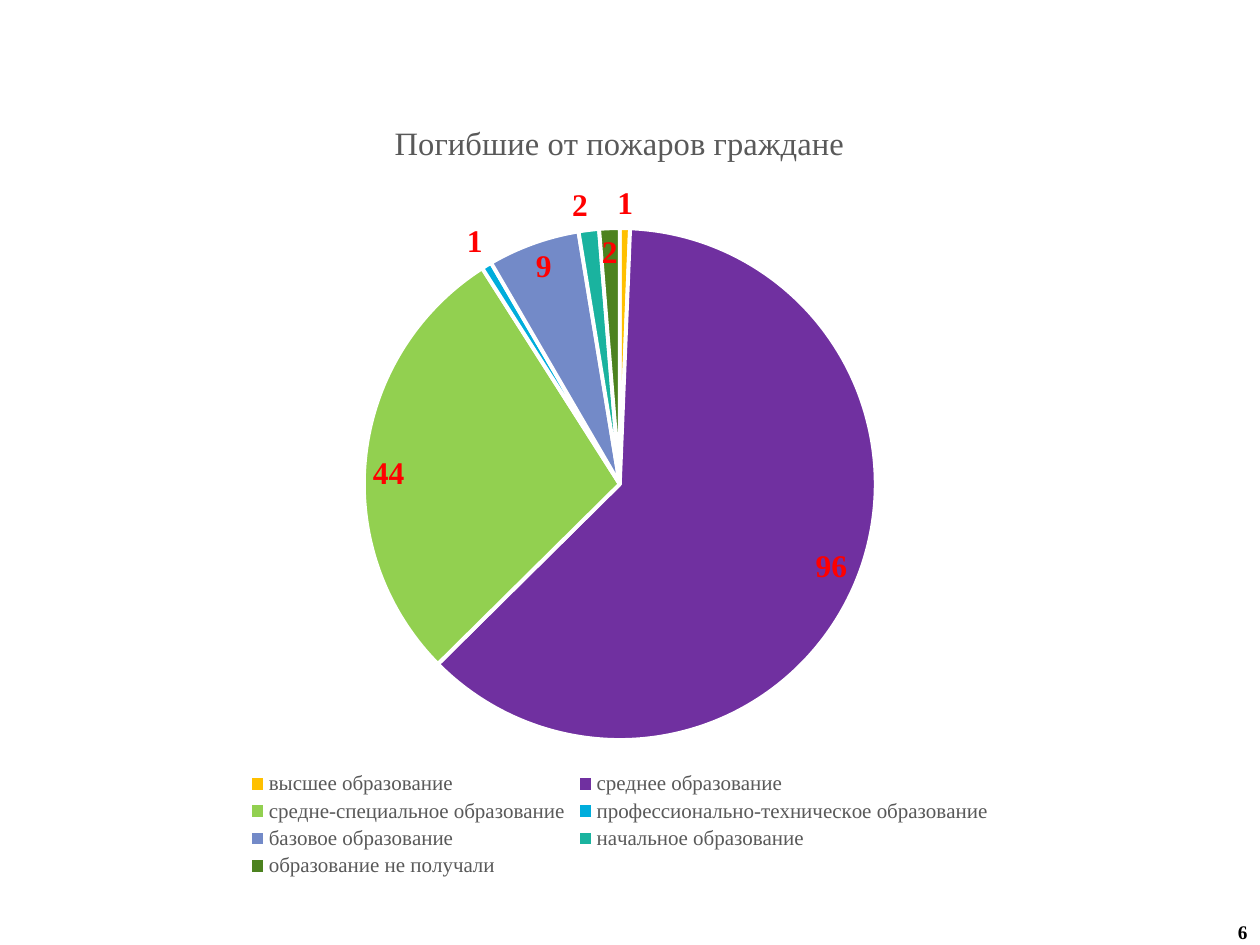
from lxml import etree
from pptx import Presentation
from pptx.chart.data import CategoryChartData
from pptx.dml.color import RGBColor
from pptx.enum.chart import XL_CHART_TYPE, XL_LABEL_POSITION, XL_LEGEND_POSITION
from pptx.enum.text import PP_ALIGN
from pptx.oxml.ns import qn
from pptx.util import Cm, Pt

PIE = XL_CHART_TYPE.PIE
INSIDE = XL_LABEL_POSITION.INSIDE_END
OUTSIDE = XL_LABEL_POSITION.OUTSIDE_END
BOTTOM = XL_LEGEND_POSITION.BOTTOM
RIGHT = PP_ALIGN.RIGHT

BLACK = RGBColor(0x00, 0x00, 0x00)
WHITE = RGBColor(0xFF, 0xFF, 0xFF)
GRAY = RGBColor(0x59, 0x59, 0x59)
RED = RGBColor(0xFF, 0x00, 0x00)
GOLD = RGBColor(0xFF, 0xC0, 0x00)
PURPLE = RGBColor(0x70, 0x30, 0xA0)
LIME = RGBColor(0x92, 0xD0, 0x50)
CYAN = RGBColor(0x00, 0xAD, 0xDC)
BLUE = RGBColor(0x73, 0x8A, 0xC8)
TEAL = RGBColor(0x1A, 0xB3, 0x9F)
GREEN = RGBColor(0x4C, 0x82, 0x1F)

HEADING = "Погибшие от пожаров граждане"
EDUCATION = [
    ("высшее образование", 1, GOLD, OUTSIDE),
    ("среднее образование", 96, PURPLE, INSIDE),
    ("средне-специальное образование", 44, LIME, INSIDE),
    ("профессионально-техническое образование", 1, CYAN, OUTSIDE),
    ("базовое образование", 9, BLUE, INSIDE),
    ("начальное образование", 2, TEAL, OUTSIDE),
    ("образование не получали", 2, GREEN, INSIDE),
]
PIE_AREA = {"x": 0.27, "y": 0.17, "w": 0.46, "h": 0.65}


class SlideBuilder:
    """Holds the text style and the current slide."""

    def __init__(self, slide, font_name="Times New Roman"):
        self.slide = slide
        self.font_name = font_name

    def style(self, font, size, color, bold=False):
        font.name = self.font_name
        font.size = Pt(size)
        font.bold = bold
        font.color.rgb = color

    def place_plot(self, chart, area):
        plot_area = chart.plots[0]._element.getparent()
        for old in plot_area.findall(qn("c:layout")):
            plot_area.remove(old)
        layout = etree.Element(qn("c:layout"))
        manual = etree.SubElement(layout, qn("c:manualLayout"))
        settings = {"layoutTarget": "inner", "xMode": "edge", "yMode": "edge", **area}
        for tag, value in settings.items():
            etree.SubElement(manual, qn(f"c:{tag}")).set("val", str(value))
        plot_area.insert(0, layout)

    def pie(self, heading, rows, left, top, width, height):
        data = CategoryChartData()
        data.categories = [row[0] for row in rows]
        data.add_series(heading, [row[1] for row in rows])
        chart = self.slide.shapes.add_chart(PIE, left, top, width, height, data).chart
        self.style(chart.font, 10, BLACK)

        chart.has_title = True
        title = chart.chart_title
        title.text_frame.text = heading
        self.style(title.text_frame.paragraphs[0].runs[0].font, 18.6, GRAY)
        title.include_in_layout = False

        chart.has_legend = True
        chart.legend.position = BOTTOM
        chart.legend.include_in_layout = False
        self.style(chart.legend.font, 12, GRAY)

        plot = chart.plots[0]
        plot.vary_by_categories = True
        series = plot.series[0]
        series.data_labels.show_value = True
        self.style(series.data_labels.font, 18, RED, bold=True)
        for index, (_, _, color, position) in enumerate(rows):
            point = series.points[index]
            point.format.fill.solid()
            point.format.fill.fore_color.rgb = color
            point.format.line.color.rgb = WHITE
            point.format.line.width = Pt(2.25)
            self.style(point.data_label.font, 18, RED, bold=True)
            point.data_label.position = position
        self.place_plot(chart, PIE_AREA)

    def page_number(self, number, left, top, width, height):
        frame = self.slide.shapes.add_textbox(left, top, width, height).text_frame
        frame.word_wrap = True
        frame.text = number
        paragraph = frame.paragraphs[0]
        paragraph.alignment = RIGHT
        self.style(paragraph.runs[0].font, 11, BLACK, bold=True)


def main():
    presentation = Presentation()
    presentation.slide_width = Cm(25.4)
    presentation.slide_height = Cm(19.05)
    blank = presentation.slide_layouts[6]
    builder = SlideBuilder(presentation.slides.add_slide(blank))
    builder.pie(HEADING, EDUCATION, Cm(1.27), Cm(1.9), Cm(22.45), Cm(15.88))
    builder.page_number("6", Cm(20.12), Cm(18.42), Cm(5.28), Cm(0.63))
    presentation.save("out.pptx")


if __name__ == "__main__":
    main()
